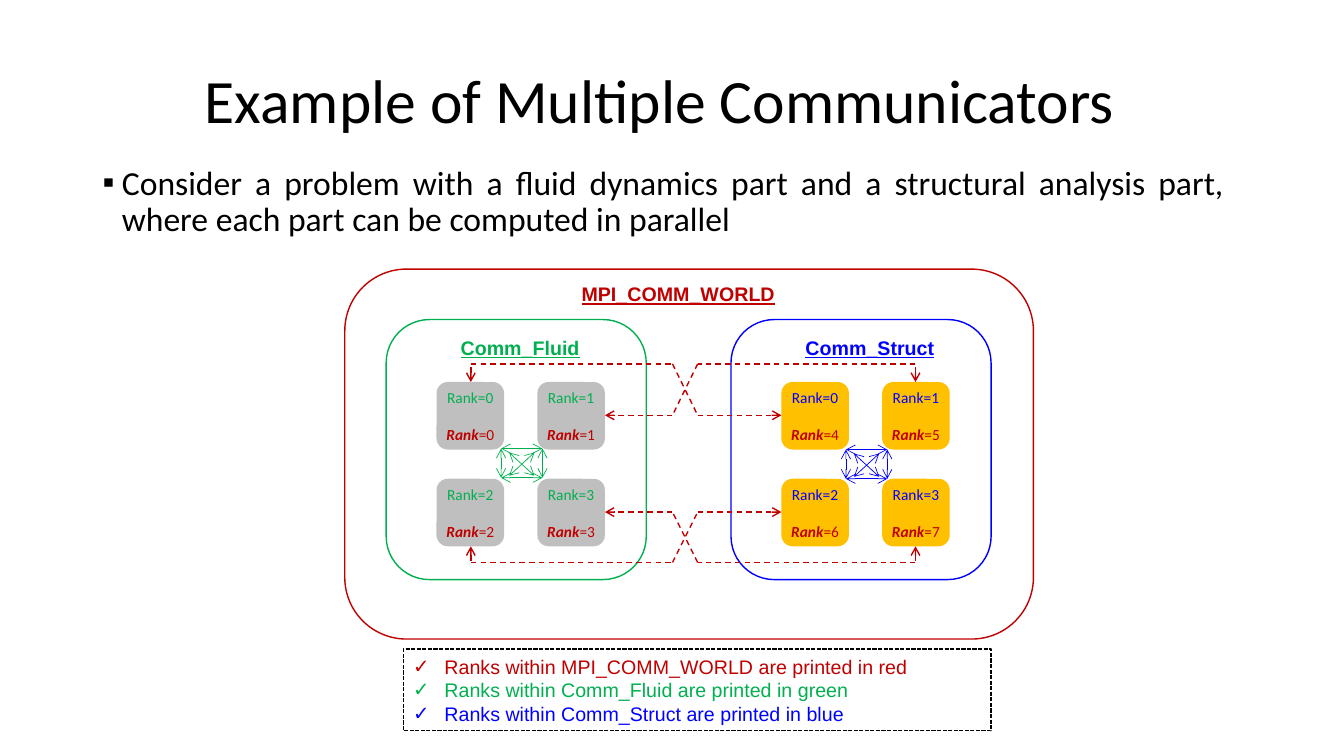
from lxml import etree
from pptx import Presentation
from pptx import util as u
from pptx.dml.color import RGBColor
from pptx.enum import dml, shapes, text
from pptx.oxml.ns import qn

COLOURS = {"black": "000000", "red": "C00000", "green": "00B050",
           "blue": "0000FF", "grey": "BFBFBF", "amber": "FFC000"}
TITLE = "Example of Multiple Communicators"
PROBLEM = ("Consider a problem with a fluid dynamics part and a structural analysis part, "
           "where each part can be computed in parallel")
WORLD = ("MPI_COMM_WORLD", "red", (5.67, 2.75, 2.13, 0.34))
COMMUNICATORS = [
    {"name": "Comm_Fluid", "left": 3.83, "label_width": 1.39, "ink": "green",
     "fill": "grey", "first_rank": 0, "mesh_top": 4.45},
    {"name": "Comm_Struct", "left": 7.25, "label_width": 1.49, "ink": "blue",
     "fill": "amber", "first_rank": 4, "mesh_top": 4.46},
]
LEGEND = [("Ranks within MPI_COMM_WORLD are printed in red", "red"),
          ("Ranks within Comm_Fluid are printed in green", "green"),
          ("Ranks within Comm_Struct are printed in blue", "blue")]
MESH = [((0, 0), (0.41, 0)), ((0, 0), (0, 0.29)), ((0.41, 0), (0.41, 0.29)),
        ((0, 0.29), (0.41, 0.29)), ((0.08, 0.04), (0.33, 0.27)),
        ((0.33, 0.04), (0.08, 0.27))]
ROUTE_COLUMNS = [(9.08, 6.92, 6.67, 6), (4.67, 6.67, 6.92, 7.75)]
ROUTE_ROWS = [(3.61, 3.79, 4.12), (5.58, 5.42, 5.08)]

HEADING = {"name": "Calibri", "size": u.Pt(44)}
BODY = {"name": "Calibri", "size": u.Pt(24)}
RANK = {"name": "Calibri", "size": u.Pt(11)}
EMPHASIS = {**RANK, "bold": True, "italic": True}
LABEL = {"name": "Arial", "size": u.Pt(14), "bold": True, "underline": True}
NOTE = {"name": "Arial", "size": u.Pt(14)}
NO_INSETS = {"margin_left": 0, "margin_right": 0, "margin_top": 0, "margin_bottom": 0}

deck = Presentation()
deck.slide_width, deck.slide_height = u.Inches(13.33), u.Inches(7.5)
page = deck.slides.add_slide(deck.slide_layouts[6])


def apply(target, values):
    for key, value in values.items():
        setattr(target, key, value)


def colour(name):
    return RGBColor.from_string(COLOURS[name])


def write(para, words, look, ink):
    span = para.add_run()
    span.text = words
    apply(span.font, look)
    span.font.color.rgb = colour(ink)


def bullet(para, mark, indent):
    props = para._p.get_or_add_pPr()
    props.set("marL", str(u.Inches(indent)))
    props.set("indent", str(-u.Inches(indent)))
    etree.SubElement(props, qn("a:buFont")).set("typeface", "Arial")
    etree.SubElement(props, qn("a:buChar")).set("char", mark)


def add_text(place, words, look, ink, **frame):
    box = page.shapes.add_textbox(*map(u.Inches, place))
    apply(box.text_frame, {"word_wrap": True, **frame})
    para = box.text_frame.paragraphs[0]
    write(para, words, look, ink)
    return para


def add_box(kind, place, fill=None, line=None):
    box = page.shapes.add_shape(kind, *map(u.Inches, place))
    box.shadow.inherit = False
    if fill:
        box.fill.solid()
        box.fill.fore_color.rgb = colour(fill)
    else:
        box.fill.background()
    if line:
        box.line.color.rgb = colour(line)
        box.line.width = u.Pt(1)
    else:
        box.line.fill.background()
    return box


def add_line(start, end, ink, width, dashed=False, arrows=()):
    link = page.shapes.add_connector(shapes.MSO_CONNECTOR.STRAIGHT,
                                     *map(u.Inches, (*start, *end)))
    link.line.color.rgb = colour(ink)
    link.line.width = u.Pt(width)
    if dashed:
        link.line.dash_style = dml.MSO_LINE.DASH
    for tip in arrows:
        etree.SubElement(link.line._get_or_add_ln(), qn("a:" + tip)).set("type", "arrow")
    etree.SubElement(link._element.spPr, qn("a:effectLst"))


def add_rank(left, top, local, world, ink, fill):
    box = add_box(shapes.MSO_SHAPE.ROUNDED_RECTANGLE, (left, top, 0.67, 0.67), fill)
    apply(box.text_frame, {**NO_INSETS, "vertical_anchor": text.MSO_ANCHOR.MIDDLE})
    first, second = box.text_frame.paragraphs[0], box.text_frame.add_paragraph()
    first.alignment = second.alignment = text.PP_ALIGN.CENTER
    second.space_before = u.Pt(13.4)
    write(first, f"Rank={local}", RANK, ink)
    write(second, "Rank", EMPHASIS, "red")
    write(second, f"={world}", RANK, "red")


def add_communicator(name, left, label_width, ink, fill, first_rank, mesh_top):
    add_box(shapes.MSO_SHAPE.ROUNDED_RECTANGLE, (left, 3.17, 2.58, 2.58), line=ink)
    add_text((left + 0.64, 3.28, label_width, 0.34), name, LABEL, ink, word_wrap=False)
    for local in range(4):
        row, column = divmod(local, 2)
        add_rank(left + 0.5 + column, 3.79 + 0.96 * row, local, first_rank + local, ink, fill)
    for start, end in MESH:
        ends = [(left + 1.14 + x, mesh_top + y) for x, y in (start, end)]
        add_line(*ends, ink, 0.5, arrows=("headEnd", "tailEnd"))


def add_route(columns, rows):
    outer, turn, cross, target = columns
    edge, block, middle = rows
    stops = [(outer, block), (outer, edge), (turn, edge), (cross, middle), (target, middle)]
    tips = [("headEnd",), (), (), ("tailEnd",)]
    for start, end, arrows in zip(stops, stops[1:], tips):
        add_line(start, end, "red", 1, True, arrows)


def add_legend():
    box = add_box(shapes.MSO_SHAPE.RECTANGLE, (4, 6.44, 5.83, 0.81), line="black")
    box.line.dash_style = dml.MSO_LINE.SQUARE_DOT
    frame = box.text_frame
    apply(frame, {"word_wrap": True, "vertical_anchor": text.MSO_ANCHOR.MIDDLE})
    for index, (words, ink) in enumerate(LEGEND):
        para = frame.add_paragraph() if index else frame.paragraphs[0]
        bullet(para, "✓", 0.31)
        para.alignment = text.PP_ALIGN.LEFT
        write(para, words, NOTE, ink)


def main():
    heading = add_text((1.92, 0.3, 9.25, 1.45), TITLE, HEADING, "black",
                       vertical_anchor=text.MSO_ANCHOR.MIDDLE)
    apply(heading, {"alignment": text.PP_ALIGN.CENTER, "line_spacing": 0.9})
    problem = add_text((0.92, 1.6, 11.32, 0.9), PROBLEM, BODY, "black")
    bullet(problem, "▪", 0.19)
    apply(problem, {"alignment": text.PP_ALIGN.JUSTIFY, "line_spacing": 0.9})
    for communicator in COMMUNICATORS:
        add_communicator(**communicator)
    for rows in ROUTE_ROWS:
        for columns in ROUTE_COLUMNS:
            add_route(columns, rows)
    add_box(shapes.MSO_SHAPE.ROUNDED_RECTANGLE, (3.42, 2.67, 6.83, 3.67), line="red")
    name, ink, place = WORLD
    add_text(place, name, LABEL, ink, word_wrap=False)
    add_legend()
    deck.save("out.pptx")


if __name__ == "__main__":
    main()
